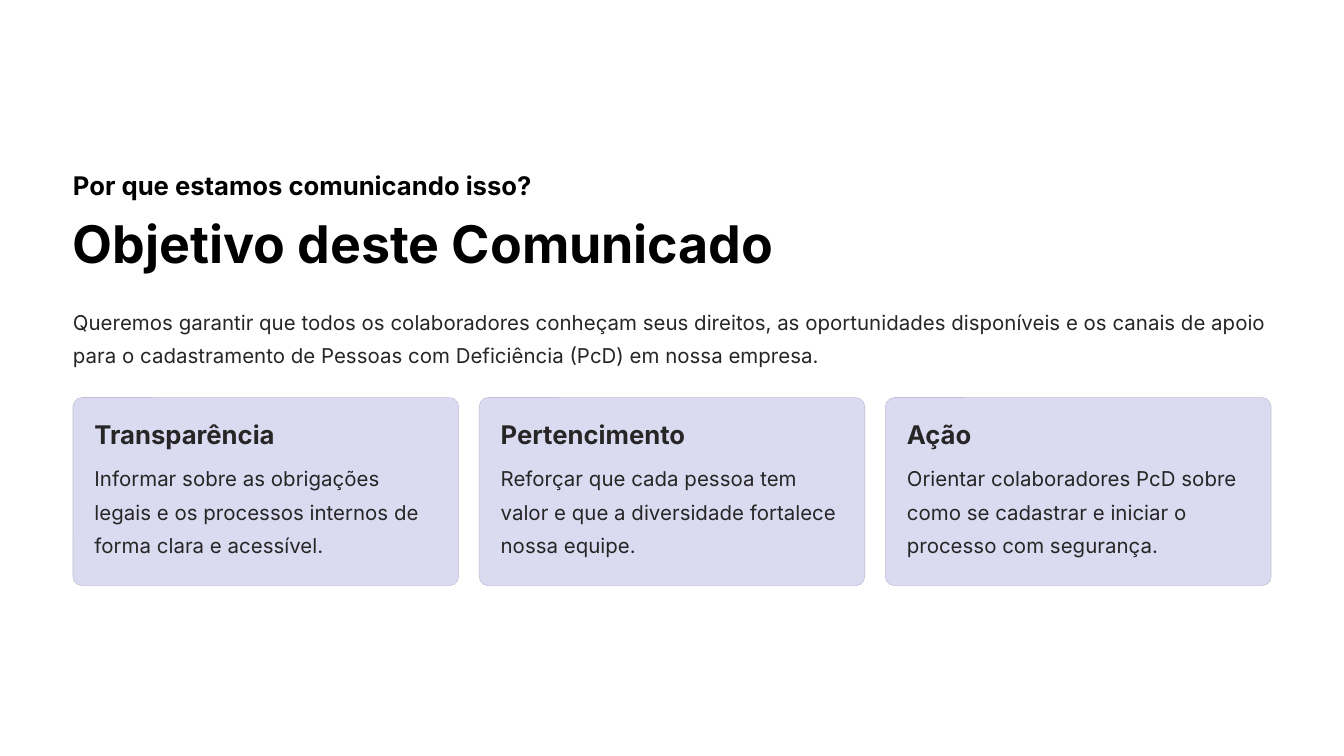
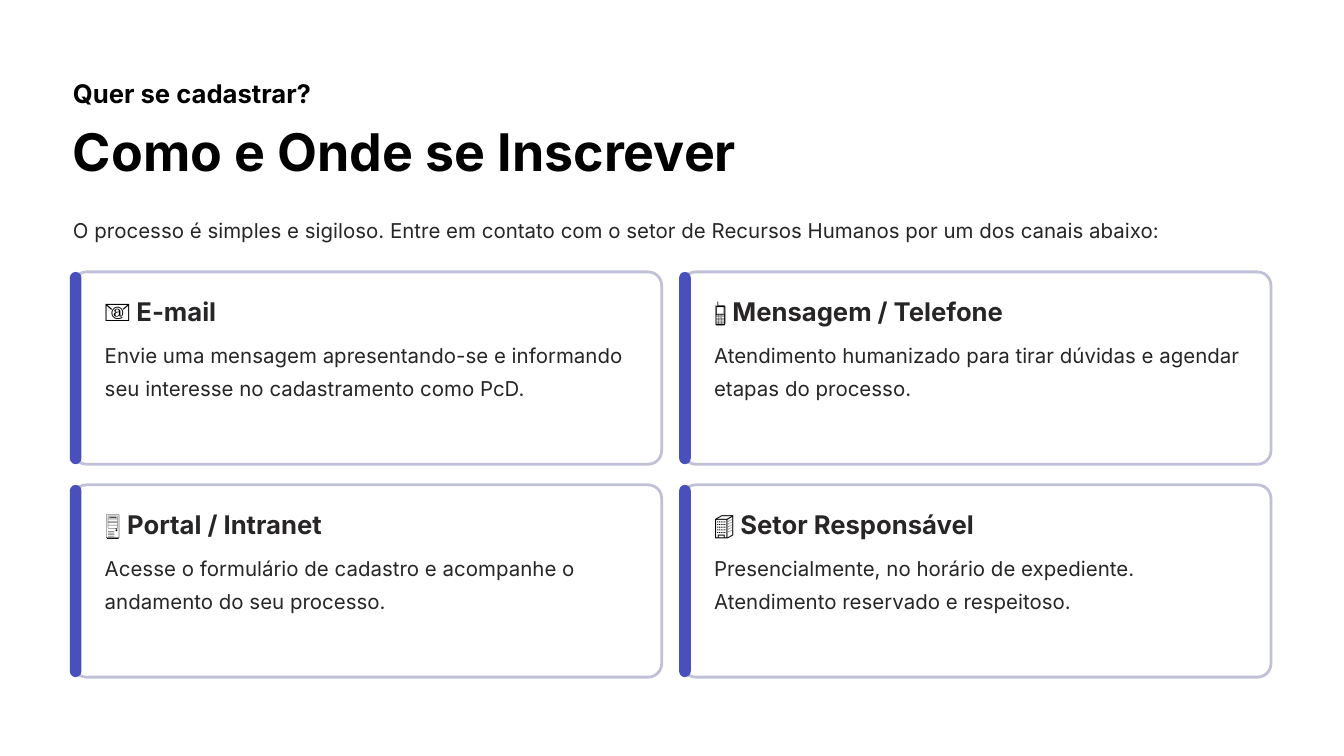
from pptx import Presentation
from pptx.dml.color import RGBColor
from pptx.enum import shapes, text
from pptx.util import Cm, Pt

COLORS = {
    "background": "FFFFFF",
    "title": "000000",
    "body": "272525",
    "lilac": "DADBF1",
    "border": "C0C1D7",
    "accent": "4950BC",
}
FONT = "Inter"

# name: (size in points, line spacing in points, bold)
STYLES = {
    "heading": (27.5, 34.4, True),
    "title": (55.6, 69.4, True),
    "body": (21.9, 35.6, False),
}

# Card looks; lengths in cm, line in points
FILLED = {"fill": "lilac", "line": 0.6, "radius": 0.34, "height": 7.11,
          "inset": (0.81, 0.77), "bar": False}
OUTLINED = {"fill": "background", "line": 3, "radius": 0.51, "height": 7.27,
            "inset": (1.2, 0.85), "bar": True}

# Each card: (icon, heading, body)
SLIDES = [
    {
        "kicker": "Por que estamos comunicando isso?",
        "title": "Objetivo deste Comunicado",
        "lead": "Queremos garantir que todos os colaboradores conheçam seus direitos, "
                "as oportunidades disponíveis e os canais de apoio para o cadastramento "
                "de Pessoas com Deficiência (PcD) em nossa empresa.",
        "top": 6.38, "cards_top": 15.03, "columns": 3, "look": FILLED,
        "cards": [
            ("", "Transparência",
             "Informar sobre as obrigações legais e os processos internos de forma "
             "clara e acessível."),
            ("", "Pertencimento",
             "Reforçar que cada pessoa tem valor e que a diversidade fortalece "
             "nossa equipe."),
            ("", "Ação",
             "Orientar colaboradores PcD sobre como se cadastrar e iniciar o "
             "processo com segurança."),
        ],
    },
    {
        "kicker": "Quer se cadastrar?",
        "title": "Como e Onde se Inscrever",
        "lead": "O processo é simples e sigiloso. Entre em contato com o setor de "
                "Recursos Humanos por um dos canais abaixo:",
        "top": 2.9, "cards_top": 10.28, "columns": 2, "look": OUTLINED,
        "cards": [
            ("📧", " E-mail",
             "Envie uma mensagem apresentando-se e informando seu interesse no "
             "cadastramento como PcD."),
            ("📱", " Mensagem / Telefone",
             "Atendimento humanizado para tirar dúvidas e agendar etapas do processo."),
            ("🖥️", " Portal / Intranet",
             "Acesse o formulário de cadastro e acompanhe o andamento do seu processo."),
            ("🏢", " Setor Responsável",
             "Presencialmente, no horário de expediente. Atendimento reservado e "
             "respeitoso."),
        ],
    },
]

SLIDE_WIDTH, SLIDE_HEIGHT = 50.8, 28.58
MARGIN = 2.76
CONTENT_WIDTH = SLIDE_WIDTH - 2 * MARGIN
GAP = 0.78
TITLE_DROP, LEAD_DROP = 1.52, 5.0
BODY_DROP = 1.51
BAR_WIDTH, BAR_OVERHANG = 0.44, 0.12


def rgb(name):
    return RGBColor.from_string(COLORS[name])


def add_text(slide, left, top, width, height, style, runs):
    """Add a one-paragraph text box; runs are (text, colour name) pairs."""
    size, spacing, bold = STYLES[style]
    box = slide.shapes.add_textbox(Cm(left), Cm(top), Cm(width), Cm(height))
    frame = box.text_frame
    frame.word_wrap = True
    frame.auto_size = text.MSO_AUTO_SIZE.NONE
    frame.margin_left = frame.margin_right = frame.margin_top = frame.margin_bottom = 0
    paragraph = frame.paragraphs[0]
    paragraph.line_spacing = Pt(spacing)
    for words, color in runs:
        run = paragraph.add_run()
        run.text = words
        run.font.name = FONT
        run.font.size = Pt(size)
        run.font.bold = bold
        run.font.color.rgb = rgb(color)


def add_rounded(slide, left, top, width, height, radius, fill, line=0):
    shape = slide.shapes.add_shape(shapes.MSO_SHAPE.ROUNDED_RECTANGLE,
                                   Cm(left), Cm(top), Cm(width), Cm(height))
    shape.adjustments[0] = radius / min(width, height)
    shape.shadow.inherit = False
    shape.fill.solid()
    shape.fill.fore_color.rgb = rgb(fill)
    if line:
        shape.line.color.rgb = rgb("border")
        shape.line.width = Pt(line)
    else:
        shape.line.fill.background()


def add_card(slide, left, top, width, look, card):
    icon, heading, body = card
    height = look["height"]
    add_rounded(slide, left, top, width, height, look["radius"], look["fill"], look["line"])
    if look["bar"]:
        add_rounded(slide, left - BAR_OVERHANG, top, BAR_WIDTH, height,
                    BAR_WIDTH / 2, "accent")
    inset_x, inset_y = look["inset"]
    text_left, text_top = left + inset_x, top + inset_y
    text_width = width - 2 * inset_x + (BAR_WIDTH - BAR_OVERHANG if look["bar"] else 0)
    runs = [(icon, "title")] if icon else []
    add_text(slide, text_left, text_top, text_width, 1.3, "heading",
             runs + [(heading, "body")])
    add_text(slide, text_left, text_top + BODY_DROP, text_width,
             height - 2 * inset_y - BODY_DROP, "body", [(body, "body")])


def add_slide(presentation, content):
    slide = presentation.slides.add_slide(presentation.slide_layouts[6])
    slide.background.fill.solid()
    slide.background.fill.fore_color.rgb = rgb("background")

    top = content["top"]
    add_text(slide, MARGIN, top, CONTENT_WIDTH, 1.3, "heading",
             [(content["kicker"], "title")])
    add_text(slide, MARGIN, top + TITLE_DROP, CONTENT_WIDTH, 2.54, "title",
             [(content["title"], "title")])
    lead_top = top + LEAD_DROP
    add_text(slide, MARGIN, lead_top, CONTENT_WIDTH,
             content["cards_top"] - lead_top - GAP, "body", [(content["lead"], "body")])

    columns, look = content["columns"], content["look"]
    width = (CONTENT_WIDTH - (columns - 1) * GAP) / columns
    for index, card in enumerate(content["cards"]):
        row, column = divmod(index, columns)
        add_card(slide, MARGIN + column * (width + GAP),
                 content["cards_top"] + row * (look["height"] + GAP), width, look, card)


def main():
    presentation = Presentation()
    presentation.slide_width = Cm(SLIDE_WIDTH)
    presentation.slide_height = Cm(SLIDE_HEIGHT)
    for content in SLIDES:
        add_slide(presentation, content)
    presentation.save("out.pptx")


if __name__ == "__main__":
    main()
